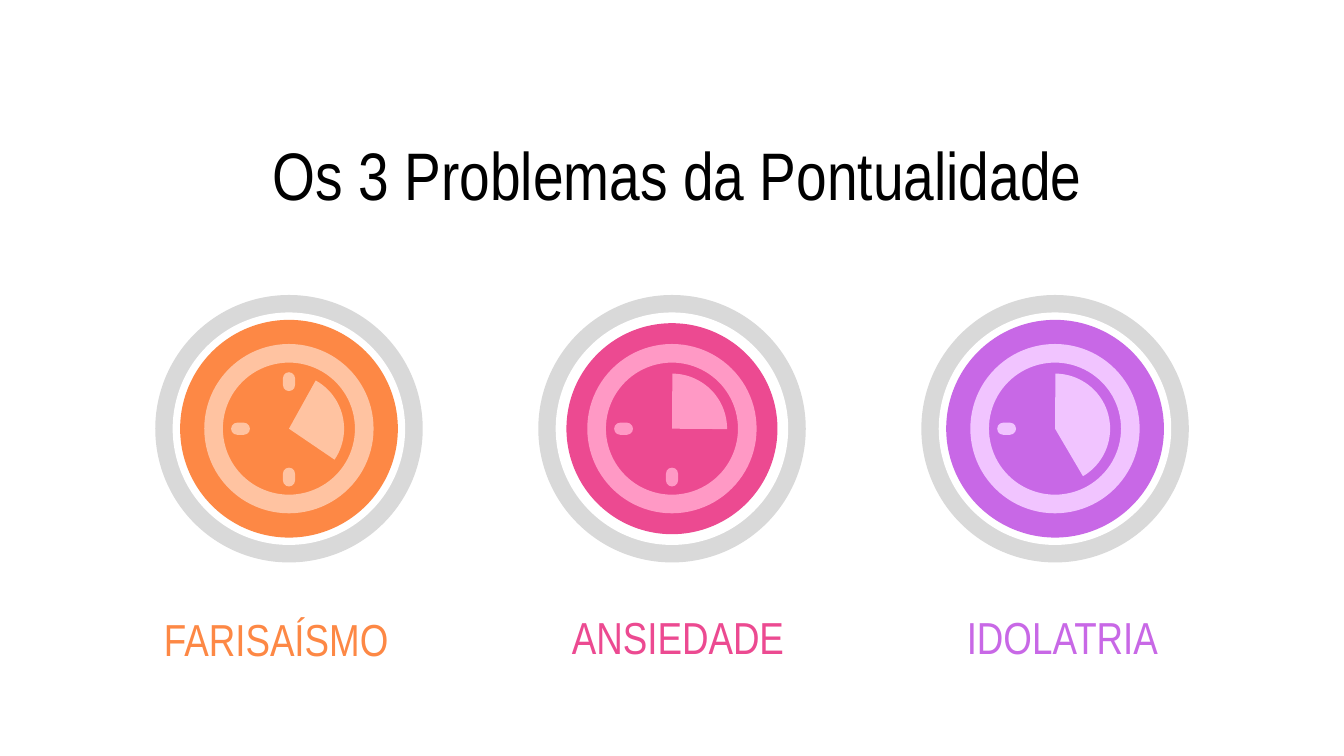
from pptx import Presentation
from pptx.dml.color import RGBColor
from pptx.enum.shapes import MSO_SHAPE
from pptx.enum.text import MSO_ANCHOR, PP_ALIGN
from pptx.util import Inches, Pt

OVAL = MSO_SHAPE.OVAL
DONUT = MSO_SHAPE.DONUT
PIE = MSO_SHAPE.PIE
ROUND = MSO_SHAPE.ROUNDED_RECTANGLE
MIDDLE = MSO_ANCHOR.MIDDLE
CENTER = PP_ALIGN.CENTER

BLACK = RGBColor(0x00, 0x00, 0x00)
WHITE = RGBColor(0xFF, 0xFF, 0xFF)
GRAY = RGBColor(0xD9, 0xD9, 0xD9)
ORANGE = RGBColor(0xFD, 0x88, 0x45)
PEACH = RGBColor(0xFF, 0xC3, 0xA1)
PINK = RGBColor(0xEC, 0x4A, 0x91)
ROSE = RGBColor(0xFF, 0x99, 0xC5)
PURPLE = RGBColor(0xC8, 0x68, 0xE6)
LILAC = RGBColor(0xF1, 0xC4, 0xFF)

prs = Presentation()
prs.slide_width = Inches(10)
prs.slide_height = Inches(10 * 9 / 16)
slide = prs.slides.add_slide(prs.slide_layouts[6])


def add_part(kind, x, y, width, height, color, *adjust):
    part = slide.shapes.add_shape(
        kind, Inches(x - width / 2), Inches(y - height / 2), Inches(width), Inches(height)
    )
    part.shadow.inherit = False
    part.fill.solid()
    part.fill.fore_color.rgb = color
    part.line.fill.background()
    for i, value in enumerate(adjust):
        part.adjustments[i] = value


def add_label(text, left, top, width, height, size, color):
    box = slide.shapes.add_textbox(Inches(left), Inches(top), Inches(width), Inches(height))
    frame = box.text_frame
    frame.word_wrap = True
    frame.vertical_anchor = MIDDLE
    frame.margin_left = frame.margin_right = Inches(0.1)
    frame.margin_top = frame.margin_bottom = Inches(0.1)
    line = frame.paragraphs[0]
    line.alignment = CENTER
    run = line.add_run()
    run.text = text
    run.font.name = "Arial Narrow"
    run.font.size = Pt(size)
    run.font.color.rgb = color


add_label("Os 3 Problemas da Pontualidade", 0.54, 1.14, 9, 0.31, 36, BLACK)

MID = 3.19
FIRST = 2.15
STEP = 2.85
DEGREE = 0.6
TICKS = {
    "top": (0, -0.35, 0.09, 0.14),
    "bottom": (0, 0.36, 0.09, 0.14),
    "left": (-0.36, 0, 0.14, 0.09),
}
clocks = [
    ("FARISAÍSMO", 1.06, 4.56, 1.99, ORANGE, PEACH, 1.62, ["top", "bottom", "left"], 299, 34.2),
    ("ANSIEDADE", 4.05, 4.55, 1.99, PINK, ROSE, 1.57, ["bottom", "left"], 270.4, 0.4),
    ("IDOLATRIA", 7.04, 4.55, 1.73, PURPLE, LILAC, 1.62, ["left"], 270.4, 59.5),
]

for i, (name, left, top, width, dark, light, face, ticks, start, end) in enumerate(clocks):
    x = FIRST + i * STEP
    for size, color in ((1.99, GRAY), (1.73, WHITE), (face, dark)):
        add_part(OVAL, x, MID, size, size, color)
    add_part(DONUT, x, MID, 1.26, 1.26, light, 0.11)
    for tick in ticks:
        dx, dy, wide, high = TICKS[tick]
        add_part(ROUND, x + dx, MID + dy, wide, high, light, 0.5)
    add_part(PIE, x, MID, 0.82, 0.82, light, start * DEGREE, end * DEGREE)
    add_label(name, left, top, width, 0.38, 24, dark)

prs.save("out.pptx")
